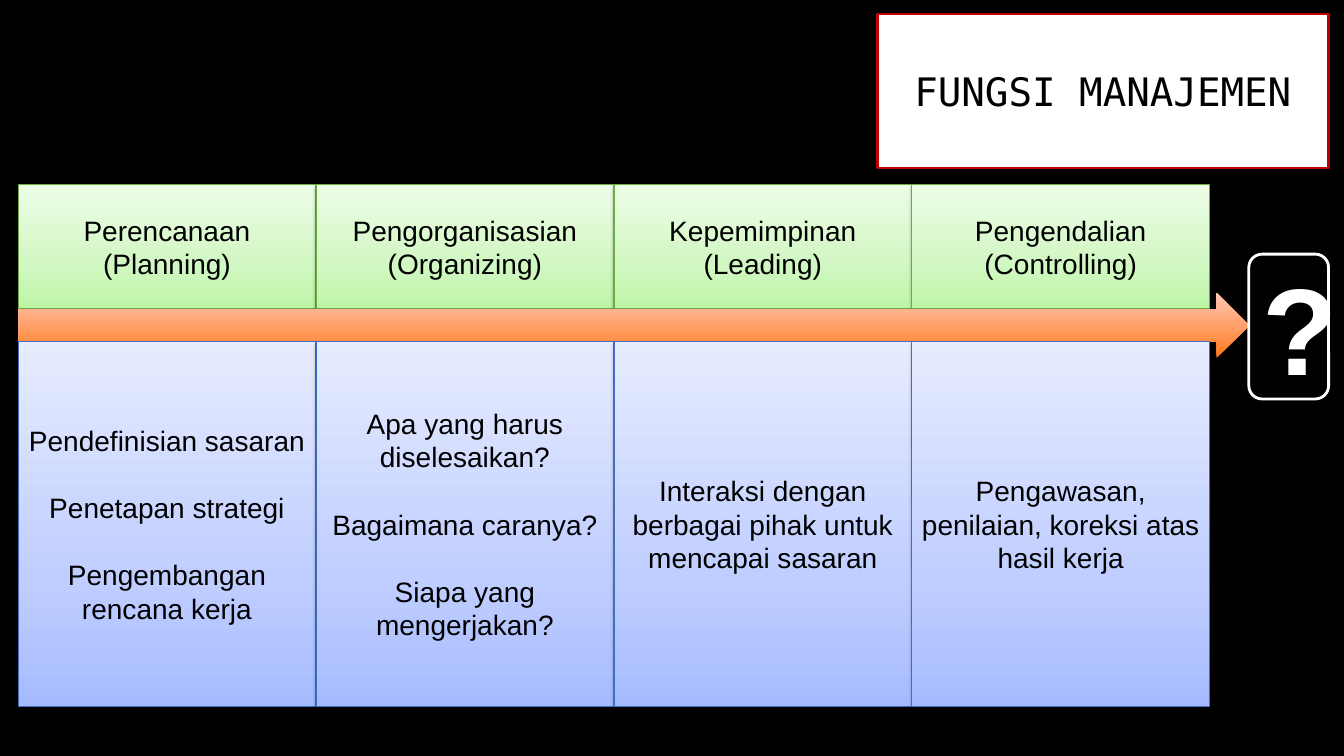
from lxml.etree import SubElement
from pptx import Presentation
from pptx.dml.color import RGBColor
from pptx.enum.shapes import MSO_SHAPE as Shape
from pptx.enum.text import MSO_ANCHOR as Anchor, MSO_AUTO_SIZE as AutoSize, PP_ALIGN as Align
from pptx.oxml.ns import qn
from pptx.util import Pt

BLACK = RGBColor(0x00, 0x00, 0x00)
WHITE = RGBColor(0xFF, 0xFF, 0xFF)
RED = RGBColor(0xC0, 0x00, 0x00)
GREEN_LINE = RGBColor(0x6D, 0xAC, 0x43)
BLUE_LINE = RGBColor(0x3F, 0x6F, 0xC3)

# Gradient stops run from the bottom edge to the top: percent, colour
GREEN_STOPS = [(0, RGBColor(0xBE, 0xF5, 0xA7)), (35, RGBColor(0xD1, 0xF7, 0xC2)),
               (100, RGBColor(0xED, 0xFD, 0xE7))]
BLUE_STOPS = [(0, RGBColor(0xA6, 0xBB, 0xFF)), (35, RGBColor(0xC0, 0xCE, 0xFF)),
              (100, RGBColor(0xE7, 0xEC, 0xFF))]
ORANGE_STOPS = [(0, RGBColor(0xFF, 0x7A, 0x1F)), (100, RGBColor(0xFF, 0xC7, 0xB6))]

LEFT, COLUMN_PITCH, COLUMN_WIDTH = 13, 212.8, 212.6
HEADER_TOP, HEADER_HEIGHT = 132, 88.5
DETAIL_TOP, DETAIL_HEIGHT = 244, 260.5

FUNCTIONS = [
    (["Perencanaan", "(Planning)"],
     ["Pendefinisian sasaran", "Penetapan strategi", "Pengembangan rencana kerja"]),
    (["Pengorganisasian", "(Organizing)"],
     ["Apa yang harus diselesaikan?", "Bagaimana caranya?", "Siapa yang mengerjakan?"]),
    (["Kepemimpinan", "(Leading)"],
     ["Interaksi dengan berbagai pihak untuk mencapai sasaran"]),
    (["Pengendalian", "(Controlling)"],
     ["Pengawasan, penilaian, koreksi atas hasil kerja"]),
]


def style_panel(shape, stops, shadow_percent):
    """Give the shape an upward gradient and a soft shadow below it."""
    shape.fill.gradient()
    shape.fill.gradient_angle = 90
    properties = shape._element.spPr
    stop_list = properties.find(qn("a:gradFill")).find(qn("a:gsLst"))
    stop_list.clear()
    for percent, color in stops:
        stop = SubElement(stop_list, qn("a:gs"), pos=str(percent * 1000))
        SubElement(stop, qn("a:srgbClr"), val=str(color))
    shape.shadow.inherit = False
    shadow = SubElement(properties.find(qn("a:effectLst")), qn("a:outerShdw"),
                        blurRad=str(Pt(3.1)), dist=str(Pt(1.7)), dir="5400000",
                        rotWithShape="0")
    color = SubElement(shadow, qn("a:srgbClr"), val=str(BLACK))
    SubElement(color, qn("a:alpha"), val=str(shadow_percent * 1000))


def write_text(shape, lines, size, color=BLACK, font="Arial", bold=False, gap=0):
    frame = shape.text_frame
    frame.word_wrap = True
    frame.auto_size = AutoSize.NONE
    frame.vertical_anchor = Anchor.MIDDLE
    frame.text = "\n".join(lines)
    for index, para in enumerate(frame.paragraphs):
        para.alignment = Align.CENTER
        para.space_before = Pt(gap if index else 0)
        para.font.name = font
        para.font.size = Pt(size)
        para.font.bold = bold
        para.font.color.rgb = color


deck = Presentation()
deck.slide_width, deck.slide_height = Pt(960), Pt(540)
slide = deck.slides.add_slide(deck.slide_layouts[5])
slide.background.fill.solid()
slide.background.fill.fore_color.rgb = BLACK

# Title cloud
title = slide.shapes.title
title.left, title.top, title.width, title.height = Pt(626.5), Pt(10), Pt(322.5), Pt(110)
geometry = SubElement(title._element.spPr, qn("a:prstGeom"), prst="cloud")
SubElement(geometry, qn("a:avLst"))
title.fill.solid()
title.fill.fore_color.rgb = WHITE
title.line.color.rgb = RED
title.line.width = Pt(2)
write_text(title, ["FUNGSI MANAJEMEN"], 28, font="DejaVu Sans Mono")

# Header row, arrow across it, then detail row
rows = [(HEADER_TOP, HEADER_HEIGHT, GREEN_STOPS, GREEN_LINE, 0),
        (DETAIL_TOP, DETAIL_HEIGHT, BLUE_STOPS, BLUE_LINE, 24)]
for row, (top, height, stops, line_color, gap) in enumerate(rows):
    for column, texts in enumerate(FUNCTIONS):
        box = slide.shapes.add_shape(Shape.RECTANGLE, Pt(LEFT + column * COLUMN_PITCH),
                                     Pt(top), Pt(COLUMN_WIDTH), Pt(height))
        box.line.color.rgb = line_color
        box.line.width = Pt(0.75)
        style_panel(box, stops, 38)
        write_text(box, texts[row], 20, gap=gap)
    if row == 0:
        arrow = slide.shapes.add_shape(Shape.RIGHT_ARROW, Pt(LEFT), Pt(209.5),
                                       Pt(879), Pt(46))
        arrow.line.fill.background()
        style_panel(arrow, ORANGE_STOPS, 35)

# Open question at the arrow's tip
question = slide.shapes.add_shape(Shape.ROUNDED_RECTANGLE, Pt(892), Pt(181.5),
                                  Pt(57), Pt(103.5))
question.fill.background()
question.line.color.rgb = WHITE
question.line.width = Pt(2)
question.shadow.inherit = False
write_text(question, ["?"], 88, color=WHITE, bold=True)

deck.save("out.pptx")
